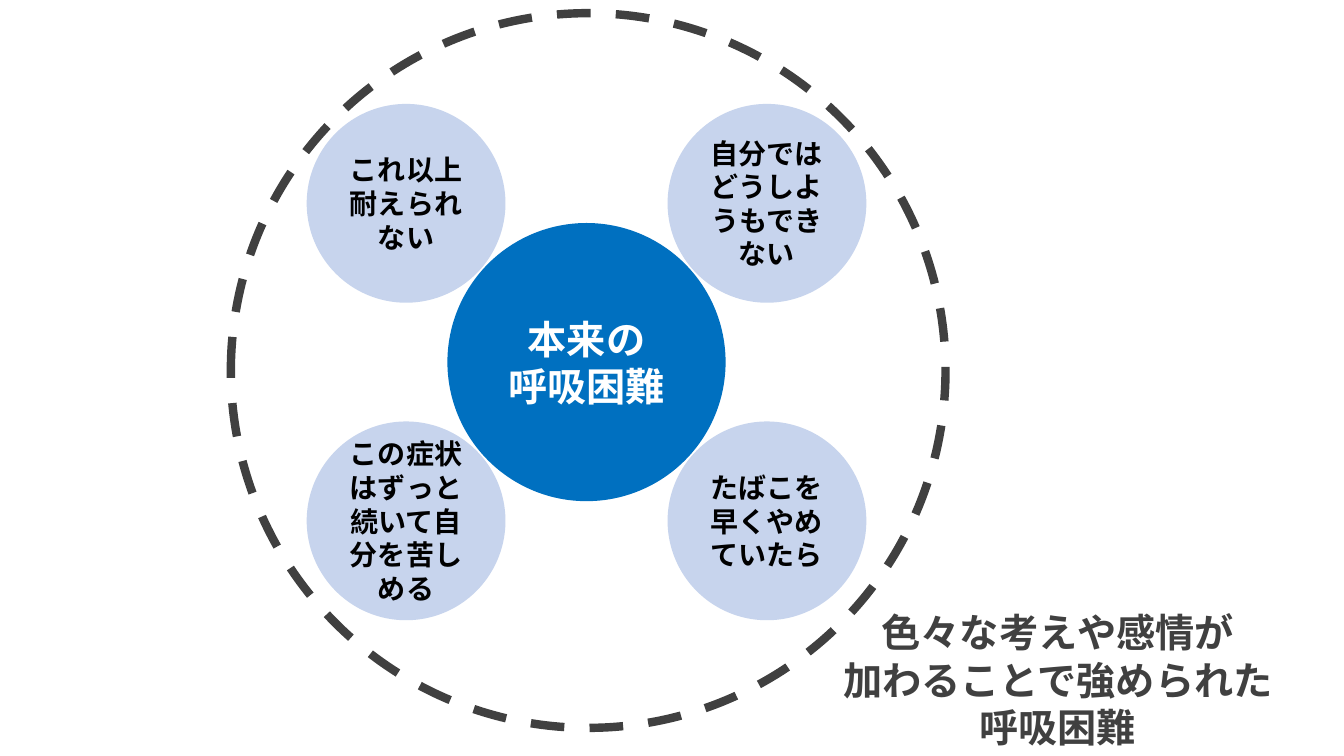
from dataclasses import dataclass

from lxml import etree
from pptx import Presentation
from pptx.dml.color import RGBColor
from pptx.enum import dml, shapes, text
from pptx.oxml import ns
from pptx.util import Pt


@dataclass(frozen=True)
class Theme:
    font: str = "Noto Sans CJK JP"
    core: RGBColor = RGBColor(0x00, 0x70, 0xC0)
    thought: RGBColor = RGBColor(0xC7, 0xD4, 0xED)
    dark: RGBColor = RGBColor(0x40, 0x40, 0x40)
    white: RGBColor = RGBColor(0xFF, 0xFF, 0xFF)
    black: RGBColor = RGBColor(0x00, 0x00, 0x00)
    large: int = 28
    small: int = 20
    ring_width: int = 6


THEME = Theme()

# Thoughts by their side of the core: (horizontal, vertical)
THOUGHTS = {
    (1, -1): "自分ではどうしようもできない",
    (1, 1): "たばこを早くやめていたら",
    (-1, 1): "この症状はずっと続いて自分を苦しめる",
    (-1, -1): "これ以上耐えられない",
}


def write_lines(frame, lines, size, color):
    """Fill a text frame with centred bold paragraphs."""
    frame.word_wrap = True
    frame.text = "\n".join(lines)
    for para in frame.paragraphs:
        para.alignment = text.PP_ALIGN.CENTER
        font = para.font
        font.name, font.size, font.bold = THEME.font, Pt(size), True
        font.color.rgb = color
        # Japanese characters take the East Asian typeface
        properties = para._p.pPr.find(ns.qn("a:defRPr"))
        etree.SubElement(properties, ns.qn("a:ea"), typeface=THEME.font)


def add_circle(page, center_x, center_y, diameter, fill=None):
    """Place a circle by its centre, without outline or shadow."""
    circle = page.shapes.add_shape(
        shapes.MSO_SHAPE.OVAL, Pt(center_x - diameter / 2),
        Pt(center_y - diameter / 2), Pt(diameter), Pt(diameter))
    circle.shadow.inherit = False
    circle.line.fill.background()
    if fill is None:
        circle.fill.background()
    else:
        circle.fill.solid()
        circle.fill.fore_color.rgb = fill
    return circle


def add_labelled_circle(page, center_x, center_y, diameter, fill, lines, size, color):
    frame = add_circle(page, center_x, center_y, diameter, fill).text_frame
    frame.vertical_anchor = text.MSO_ANCHOR.MIDDLE
    write_lines(frame, lines, size, color)


def add_breathing_diagram(page, left, top, diameter):
    """Core, surrounding thoughts and dashed ring inside a square box."""
    ring_x, ring_y = left + diameter / 2, top + diameter / 2
    core_x, core_y = ring_x - 1.2, ring_y - 6

    # Core
    add_labelled_circle(page, core_x, core_y, 198.7, THEME.core,
                        ["本来の", "呼吸困難"], THEME.large, THEME.white)

    # Thoughts in the four corners
    for (side_x, side_y), thought in THOUGHTS.items():
        add_labelled_circle(page, core_x + side_x * 128.9, core_y + side_y * 113.4,
                            142, THEME.thought, [thought], THEME.small, THEME.black)

    # Dashed ring
    ring = add_circle(page, ring_x, ring_y, diameter)
    ring.line.color.rgb = THEME.dark
    ring.line.width = Pt(THEME.ring_width)
    ring.line.dash_style = dml.MSO_LINE.DASH


def add_caption(page, left, top, width, height):
    """Explanation of the ring."""
    box = page.shapes.add_textbox(Pt(left), Pt(top), Pt(width), Pt(height))
    write_lines(box.text_frame,
                ["色々な考えや感情が", "加わることで強められた", "呼吸困難"],
                THEME.large, THEME.dark)
    box.text_frame.auto_size = text.MSO_AUTO_SIZE.SHAPE_TO_FIT_TEXT


def main():
    deck = Presentation()
    deck.slide_width, deck.slide_height = Pt(960), Pt(540)
    page = deck.slides.add_slide(deck.slide_layouts[6])
    add_breathing_diagram(page, 164.9, 9.4, 510.5)
    add_caption(page, 577.4, 431.3, 356.4, 108.7)
    deck.save("out.pptx")


if __name__ == "__main__":
    main()
